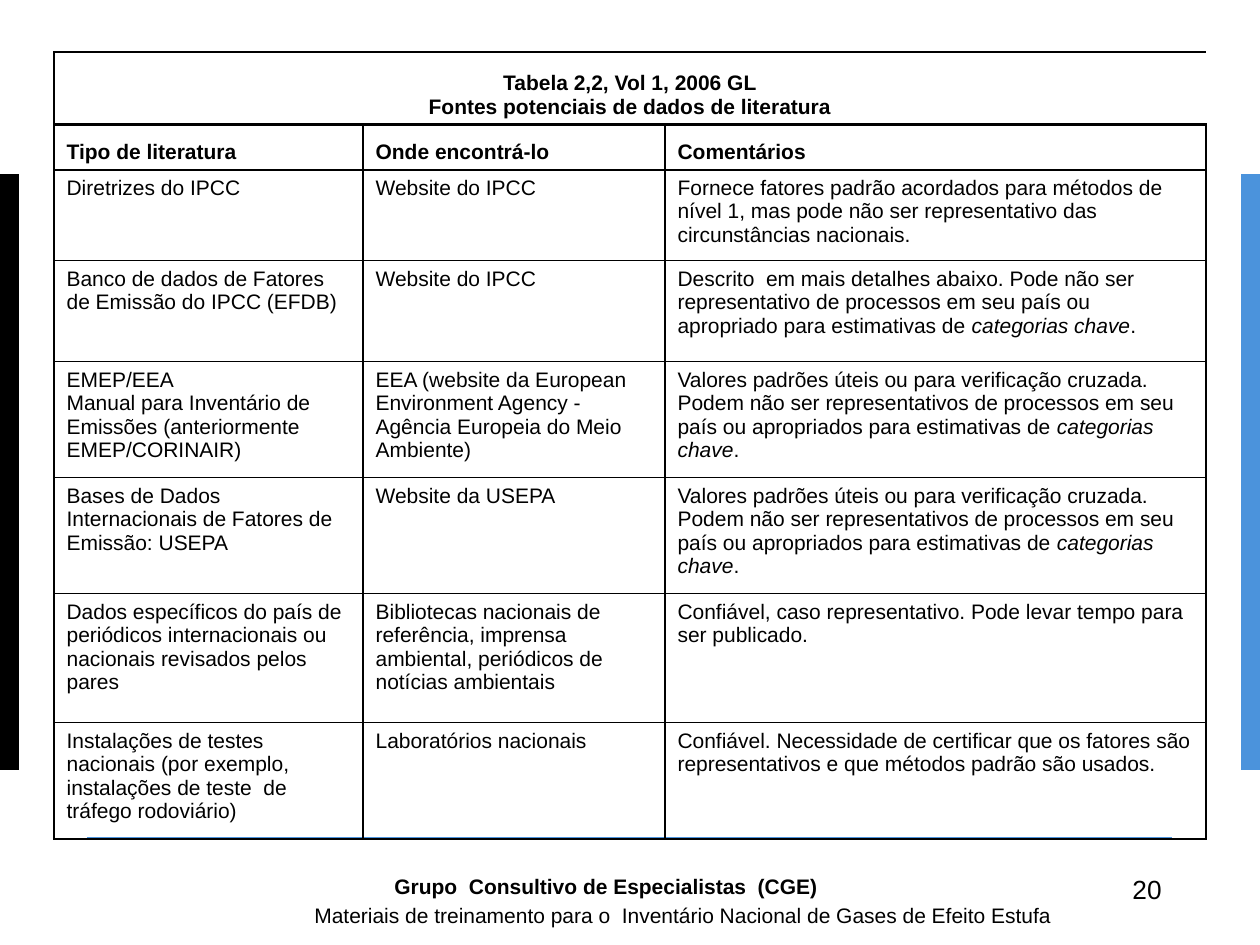
from dataclasses import dataclass

from lxml.etree import SubElement
from pptx import Presentation
from pptx.dml.color import RGBColor
from pptx.enum.shapes import MSO_CONNECTOR, MSO_SHAPE
from pptx.enum.text import MSO_ANCHOR, PP_ALIGN
from pptx.oxml import parse_xml
from pptx.oxml.ns import nsdecls, qn
from pptx.util import Inches, Pt

SCALE = Inches(1) / 126
PLAIN_STYLE = "{2D5ABB26-0587-4C30-8999-92F81FD0307C}"


@dataclass(frozen=True)
class Theme:
    font: str = "Arial"
    black: str = "000000"
    white: str = "FFFFFF"
    blue: str = "4B93DC"
    body: int = 12
    number: int = 15
    thin: float = 0.75
    medium: float = 1
    thick: float = 2


THEME = Theme()

KEY_TERM = "categorias chave"
CROSS_CHECK = (
    "Valores padrões úteis ou para verificação cruzada. Podem não ser representativos "
    f"de processos em seu país ou apropriados para estimativas de {KEY_TERM}."
)
TITLE = "Tabela 2,2, Vol 1, 2006 GL\nFontes potenciais de dados de literatura"
ROWS = [
    (TITLE, "", ""),
    ("Tipo de literatura", "Onde encontrá-lo", "Comentários"),
    ("Diretrizes do IPCC", "Website do IPCC",
     "Fornece fatores padrão acordados para métodos de nível 1, mas pode não ser "
     "representativo das circunstâncias nacionais."),
    ("Banco de dados de Fatores de Emissão do IPCC (EFDB)", "Website do IPCC",
     "Descrito\u00a0 em mais detalhes abaixo. Pode não ser representativo de processos "
     f"em seu país ou apropriado para estimativas de {KEY_TERM}."),
    ("EMEP/EEA\nManual para Inventário de Emissões (anteriormente EMEP/CORINAIR)",
     "EEA (website da European Environment Agency -\nAgência Europeia do Meio Ambiente)",
     CROSS_CHECK),
    ("Bases de Dados Internacionais de Fatores de Emissão: USEPA", "Website da USEPA",
     CROSS_CHECK),
    ("Dados específicos do país de periódicos internacionais ou nacionais revisados "
     "pelos pares",
     "Bibliotecas nacionais de referência, imprensa ambiental, periódicos de notícias "
     "ambientais",
     "Confiável, caso representativo. Pode levar tempo para ser publicado."),
    ("Instalações de testes nacionais (por exemplo, instalações de teste  de tráfego "
     "rodoviário)",
     "Laboratórios nacionais",
     "Confiável. Necessidade de certificar que os fatores são representativos e que "
     "métodos padrão são usados."),
]
COLUMN_WIDTHS = [309, 302, 541]
ROW_HEIGHTS = [73, 45, 91, 101, 116, 116, 129, 116]


def px(value):
    return round(value * SCALE)


def color(value):
    return RGBColor.from_string(value)


def write_text(text_frame, text, size, bold=False, align=PP_ALIGN.LEFT):
    """Fill a frame, one paragraph a line, with the key term in italics."""
    text_frame.text = text
    for paragraph in text_frame.paragraphs:
        paragraph.alignment = align
        before, term, after = paragraph.text.partition(KEY_TERM)
        if term:
            paragraph.text = before
            paragraph.add_run().text = term
            paragraph.add_run().text = after
        for run in paragraph.runs:
            font = run.font
            font.name, font.size, font.bold = THEME.font, Pt(size), bold
            font.color.rgb = color(THEME.black)
            font.italic = run.text == KEY_TERM


def add_text(slide, box, text, size, bold=False):
    text_frame = slide.shapes.add_textbox(*map(px, box)).text_frame
    text_frame.word_wrap = True
    write_text(text_frame, text, size, bold)


def set_borders(cell, widths):
    """Borders precede the fill among the cell properties."""
    properties = cell._tc.get_or_add_tcPr()
    for index, (side, width) in enumerate(widths.items()):
        properties.insert(index, parse_xml(
            f'<a:ln{side} {nsdecls("a")} w="{Pt(width)}"><a:solidFill>'
            f'<a:srgbClr val="{THEME.black}"/></a:solidFill></a:ln{side}>'))


def add_frame(slide, left, top, width, height):
    """Side bars and the rule above the footer."""
    bar_width, bar_top, bar_height = 19, 174, 596
    bars = [(left, THEME.black), (left + width - bar_width, THEME.blue)]
    for bar_left, fill in bars:
        bar = slide.shapes.add_shape(
            MSO_SHAPE.RECTANGLE,
            *map(px, (bar_left, top + bar_top, bar_width, bar_height)))
        bar.shadow.inherit = False
        bar.fill.solid()
        bar.fill.fore_color.rgb = color(fill)
        bar.line.fill.background()

    rule_y = top + 838
    rule = slide.shapes.add_connector(
        MSO_CONNECTOR.STRAIGHT,
        *map(px, (left + 87, rule_y, left + width - 88, rule_y)))
    rule.line.color.rgb = color(THEME.blue)
    rule.line.width = Pt(THEME.medium)
    SubElement(rule._element.spPr, qn("a:effectLst"))


def add_sources_table(slide, left, top):
    """Table of literature sources under a merged title row."""
    row_count, column_count = len(ROWS), len(COLUMN_WIDTHS)
    table = slide.shapes.add_table(
        row_count, column_count,
        *map(px, (left, top, sum(COLUMN_WIDTHS), sum(ROW_HEIGHTS)))).table
    table.first_row = table.horz_banding = False
    table._tbl.tblPr.find(qn("a:tableStyleId")).text = PLAIN_STYLE
    for column, width in zip(table.columns, COLUMN_WIDTHS):
        column.width = px(width)
    for row, height in zip(table.rows, ROW_HEIGHTS):
        row.height = px(height)
    table.cell(0, 0).merge(table.cell(0, column_count - 1))

    # Rule widths from edge to edge
    across = [THEME.medium, THEME.thick, THEME.medium]
    across += [THEME.thin] * (row_count - 3) + [THEME.medium]
    down = [THEME.medium] + [THEME.thin] * (column_count - 1) + [THEME.medium]

    for r, texts in enumerate(ROWS):
        for c, text in enumerate(texts):
            cell = table.cell(r, c)
            heading = r < 2
            cell.vertical_anchor = MSO_ANCHOR.BOTTOM if heading else MSO_ANCHOR.TOP
            if r == 0:
                cell.fill.solid()
                cell.fill.fore_color.rgb = color(THEME.white)
            else:
                cell.fill.background()
            if text:
                align = PP_ALIGN.CENTER if r == 0 else PP_ALIGN.LEFT
                write_text(cell.text_frame, text, THEME.body, heading, align)
            borders = {"L": down[c], "R": down[c + 1],
                       "T": across[r], "B": across[r + 1]}
            if r == 0 and c > 0:
                del borders["L"]
            if r == 0 and c < column_count - 1:
                del borders["R"]
            set_borders(cell, borders)


def add_footer(slide, left, top):
    """Group name, course name and page number."""
    add_text(slide, (left + 1120, top, 56, 44), "20", THEME.number)
    add_text(slide, (left + 302, top + 29, 781, 33),
             "Materiais de treinamento para o  Inventário Nacional de Gases de Efeito "
             "Estufa", THEME.body)
    add_text(slide, (left + 382, top, 496, 29),
             "Grupo  Consultivo de Especialistas  (CGE)", THEME.body, bold=True)


def main():
    presentation = Presentation()
    presentation.slide_width, presentation.slide_height = px(1260), px(945)
    slide = presentation.slides.add_slide(presentation.slide_layouts[6])
    add_frame(slide, 0, 0, 1260, 945)
    add_sources_table(slide, 54, 52)
    add_footer(slide, 0, 867)
    presentation.save("out.pptx")


if __name__ == "__main__":
    main()
